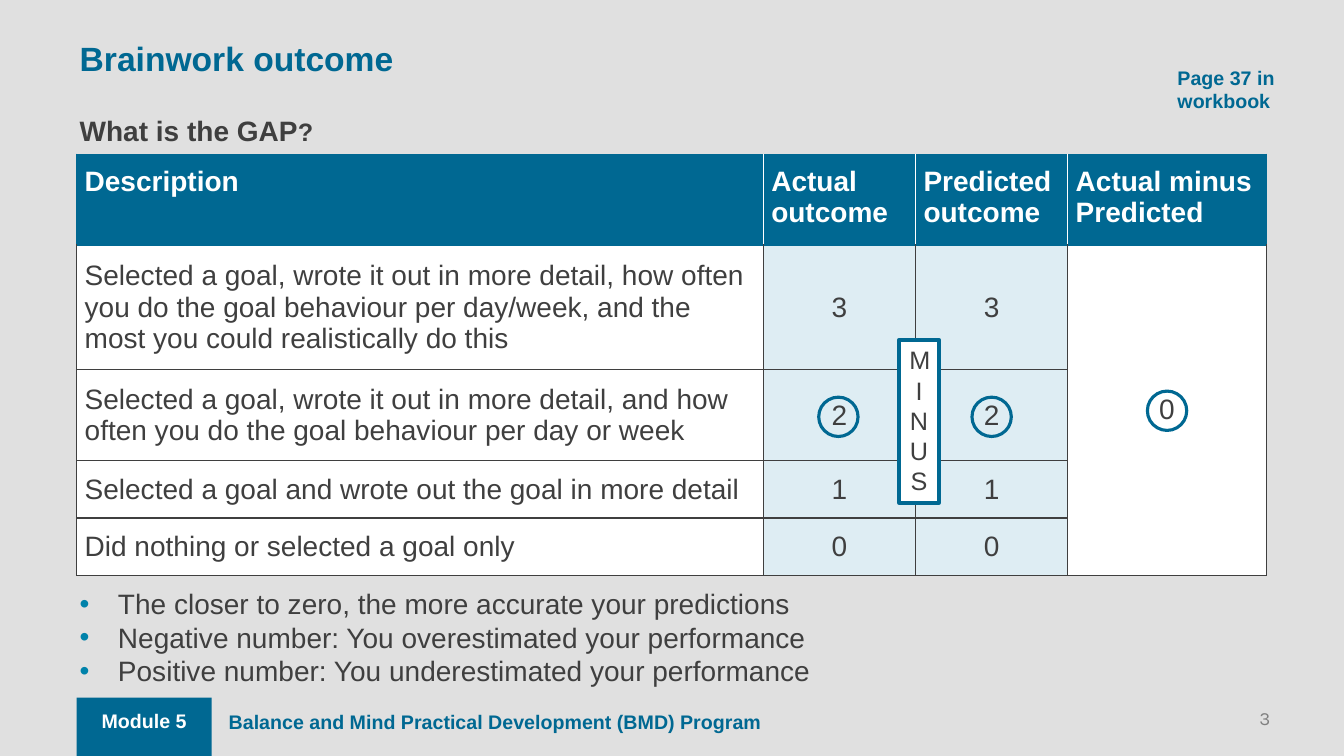
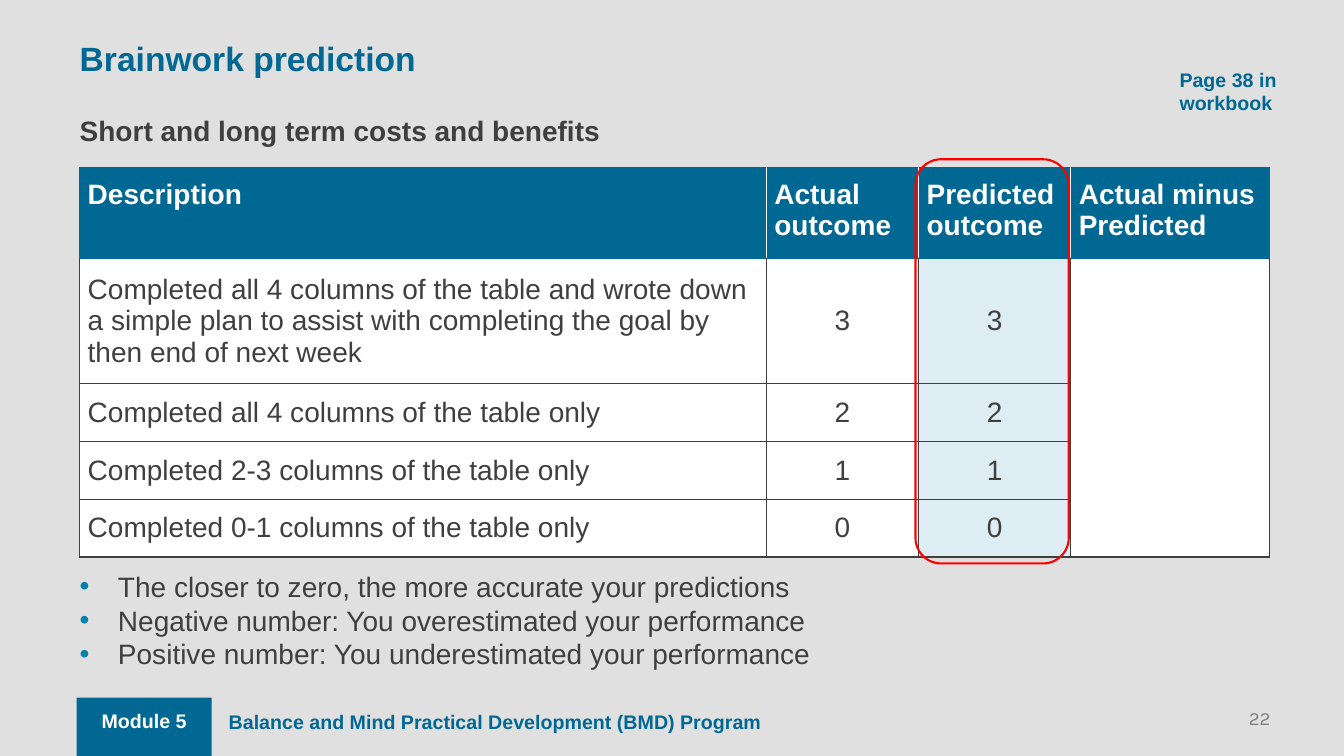
from lxml import etree
from pptx import Presentation
from pptx.dml.color import RGBColor
from pptx.enum.shapes import MSO_SHAPE
from pptx.enum.text import MSO_ANCHOR, PP_ALIGN
from pptx.oxml.ns import qn
from pptx.util import Inches, Pt

RECTANGLE = MSO_SHAPE.RECTANGLE
ROUNDED = MSO_SHAPE.ROUNDED_RECTANGLE
OVAL = MSO_SHAPE.OVAL
LEFT, CENTER, RIGHT = PP_ALIGN.LEFT, PP_ALIGN.CENTER, PP_ALIGN.RIGHT
TOP, MIDDLE = MSO_ANCHOR.TOP, MSO_ANCHOR.MIDDLE

COLORS = {
    "background": "E0E0E0",
    "blue": "006892",
    "bullet": "0082AA",
    "pale": "DEEDF3",
    "text": "3F3F3F",
    "number": "808080",
    "white": "FFFFFF",
    "red": "FF0000",
}
DEFAULT_INSETS = (0.1, 0.05, 0.1, 0.05)
NO_INSETS = (0, 0, 0, 0)
CELL_INSETS = (0.08, 0.12, 0.08, 0.12)
COLUMN_WIDTHS = (6.81, 1.51, 1.51, 1.97)
PROGRAM = "Balance and Mind Practical Development (BMD) Program"
HEADERS = ("Description", "Actual outcome", "Predicted outcome", "Actual minus Predicted")
BULLETS = (
    "The closer to zero, the more accurate your predictions",
    "Negative number: You overestimated your performance",
    "Positive number: You underestimated your performance",
)
SLIDES = [
    {
        "title": "Brainwork outcome",
        "subtitle": [("What is the GAP", 20), ("?", 18)],
        "page_note": ("Page 37 in workbook", 11.58, 0.6),
        "number": "3",
        "table_at": (0.76, 1.53),
        "row_heights": (0.9, 1.24, 0.9, 0.57, 0.57),
        "descriptions": (
            "Selected a goal, wrote it out in more detail, how often you do the goal "
            "behaviour per day/week, and the most you could realistically do this",
            "Selected a goal, wrote it out in more detail, and how often you do the "
            "goal behaviour per day or week",
            "Selected a goal and wrote out the goal in more detail",
            "Did nothing or selected a goal only",
        ),
        "gap": "0",
        "pale_columns": (1, 2),
        "bullets_top": 5.82,
        "marks": [
            (OVAL, (9.64, 3.94, 0.39, 0.39), "blue", 2.25, ""),
            (OVAL, (8.12, 3.94, 0.39, 0.39), "blue", 2.25, ""),
            (RECTANGLE, (8.92, 3.37, 0.39, 1.62), "blue", 2.75, "MINUS"),
            (OVAL, (11.38, 3.88, 0.39, 0.39), "blue", 2.25, ""),
        ],
    },
    {
        "title": "Brainwork prediction",
        "subtitle": [("Short and long term costs and benefits", 20)],
        "page_note": ("Page 38 in workbook", 11.6, 0.62),
        "number": "22",
        "table_at": (0.79, 1.66),
        "row_heights": (0.9, 1.24, 0.57, 0.57, 0.57),
        "descriptions": (
            "Completed all 4 columns of the table and wrote down a simple plan to "
            "assist with completing the goal by then end of next week",
            "Completed all 4 columns of the table only",
            "Completed 2-3 columns of the table only",
            "Completed 0-1 columns of the table only",
        ),
        "gap": "",
        "pale_columns": (2,),
        "bullets_top": 5.65,
        "marks": [(ROUNDED, (9.08, 1.58, 1.52, 4.01), "red", 1.5, "")],
    },
]


def rgb(name):
    return RGBColor.from_string(COLORS[name])


def write(frame, paragraphs, color="text", bold=False, align=LEFT, anchor=TOP,
          insets=DEFAULT_INSETS, before=0, font="Arial"):
    """Fill a text frame or table cell; each paragraph is a list of (text, size) runs."""
    text_frame = getattr(frame, "text_frame", frame)
    text_frame.word_wrap = True
    frame.vertical_anchor = anchor
    (frame.margin_left, frame.margin_top,
     frame.margin_right, frame.margin_bottom) = map(Inches, insets)
    for index, runs in enumerate(paragraphs):
        paragraph = text_frame.add_paragraph() if index else text_frame.paragraphs[0]
        paragraph.alignment = align
        paragraph.space_before = Pt(before)
        for text, size in runs:
            run = paragraph.add_run()
            run.text = text
            run.font.name = font
            run.font.size = Pt(size)
            run.font.bold = bold
            run.font.color.rgb = rgb(color)


presentation = Presentation()
presentation.slide_width = Inches(13.33)
presentation.slide_height = Inches(7.5)
background = presentation.slide_master.background.fill
background.solid()
background.fore_color.rgb = rgb("background")

for content in SLIDES:
    slide = presentation.slides.add_slide(presentation.slide_layouts[6])
    shapes = slide.shapes

    # Footer band
    band = shapes.add_shape(RECTANGLE, Inches(0.76), Inches(6.92), Inches(1.34), Inches(0.6))
    band.shadow.inherit = False
    band.fill.solid()
    band.fill.fore_color.rgb = rgb("blue")
    band.line.fill.background()

    # Table
    left, top = content["table_at"]
    heights = content["row_heights"]
    table = shapes.add_table(
        len(heights), len(COLUMN_WIDTHS), Inches(left), Inches(top),
        Inches(sum(COLUMN_WIDTHS)), Inches(sum(heights))).table
    table.first_row = table.horz_banding = False
    for column, width in zip(table.columns, COLUMN_WIDTHS):
        column.width = Inches(width)
    for row, height in zip(table.rows, heights):
        row.height = Inches(height)

    rows = [HEADERS]
    for index, description in enumerate(content["descriptions"]):
        gap = content["gap"] if index == 0 else ""
        rows.append((description, str(3 - index), str(3 - index), gap))
    last_column = len(COLUMN_WIDTHS) - 1
    for row_index, texts in enumerate(rows):
        header = row_index == 0
        for column_index, text in enumerate(texts):
            cell = table.cell(row_index, column_index)
            write(cell, [[(text, 20)] if text else []],
                  color="white" if header else "text", bold=header,
                  align=LEFT if header or column_index == 0 else CENTER,
                  anchor=TOP if header else MIDDLE, insets=CELL_INSETS)
            if header:
                fill, side_left, side_right = "blue", "white", "white"
                if column_index == 0:
                    side_left = "blue"
                if column_index == last_column:
                    side_right = "blue"
            else:
                fill = "pale" if column_index in content["pale_columns"] else "white"
                side_left = side_right = "text"
            borders = {
                "a:lnL": side_left,
                "a:lnR": side_right,
                "a:lnT": "blue" if row_index <= 1 else "text",
                "a:lnB": "blue" if header else "text",
            }
            properties = cell._tc.get_or_add_tcPr()
            for tag, color in borders.items():
                line = etree.SubElement(properties, qn(tag), w=str(Pt(1)))
                solid = etree.SubElement(line, qn("a:solidFill"))
                etree.SubElement(solid, qn("a:srgbClr"), val=COLORS[color])
            cell.fill.solid()
            cell.fill.fore_color.rgb = rgb(fill)
    table.cell(1, last_column).merge(table.cell(len(rows) - 1, last_column))

    # Text boxes
    note, note_left, note_top = content["page_note"]
    blue_bold = {"color": "blue", "bold": True}
    flush = {"insets": NO_INSETS}
    text_boxes = [
        ((2.17, 6.99, 11.14, 0.47), [[(PROGRAM, 14)]], {**blue_bold, "before": 8}),
        ((0.76, 6.98, 1.34, 0.34), [[("Module 5", 14)]],
         {"color": "white", "bold": True, "align": CENTER, "before": 8}),
        ((0.79, 0.34, 8.92, 0.47), [[(content["title"], 24)]],
         {**blue_bold, **flush, "anchor": MIDDLE, "before": 8}),
        ((10.6, 7.01, 2, 0.2), [[(content["number"], 13.3)]],
         {**flush, "color": "number", "align": RIGHT, "font": "Karla"}),
        ((0.79, 1.08, 6.72, 0.44), [content["subtitle"]],
         {"bold": True, "insets": (0, 0.05, 0.1, 0.05)}),
        ((note_left, note_top, 1.38, 0.57), [[(note, 14)]], blue_bold),
    ]
    for box, paragraphs, style in text_boxes:
        write(shapes.add_textbox(*map(Inches, box)).text_frame, paragraphs, **style)

    # Bullets
    bullet_box = shapes.add_textbox(
        Inches(0.79), Inches(content["bullets_top"]), Inches(11.81), Inches(1.3))
    write(bullet_box.text_frame, [[(text, 20)] for text in BULLETS], insets=NO_INSETS)
    for paragraph in bullet_box.text_frame.paragraphs:
        properties = paragraph._p.get_or_add_pPr()
        properties.set("marL", str(Inches(0.38)))
        properties.set("indent", str(-Inches(0.38)))
        bullet_color = etree.SubElement(properties, qn("a:buClr"))
        etree.SubElement(bullet_color, qn("a:srgbClr"), val=COLORS["bullet"])
        etree.SubElement(properties, qn("a:buFont"), typeface="Arial")
        etree.SubElement(properties, qn("a:buChar"), char="•")

    # Marks over the table
    for kind, box, color, width, text in content["marks"]:
        mark = shapes.add_shape(kind, *map(Inches, box))
        mark.shadow.inherit = False
        mark.line.color.rgb = rgb(color)
        mark.line.width = Pt(width)
        if text:
            mark.fill.solid()
            mark.fill.fore_color.rgb = rgb("white")
            write(mark.text_frame, [[(text, 18)]], align=CENTER)
        else:
            mark.fill.background()

presentation.save("out.pptx")
